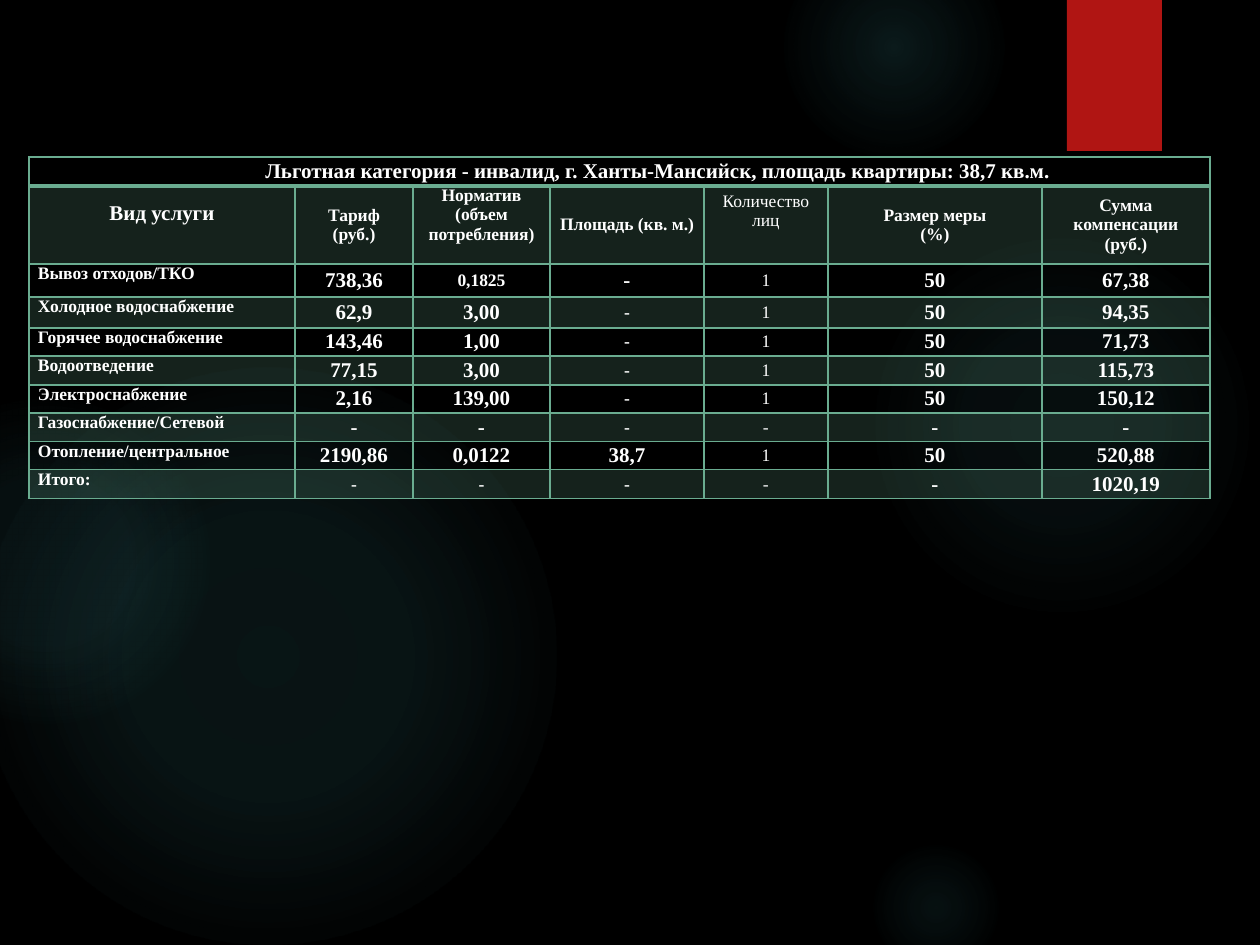
from lxml import etree
from pptx import Presentation
from pptx.dml.color import RGBColor
from pptx.enum.shapes import MSO_SHAPE
from pptx.enum.text import MSO_ANCHOR, PP_ALIGN
from pptx.oxml.ns import qn
from pptx.util import Emu, Pt

OVAL, RECT = MSO_SHAPE.OVAL, MSO_SHAPE.RECTANGLE
TOP, MIDDLE = MSO_ANCHOR.TOP, MSO_ANCHOR.MIDDLE
LEFT, CENTER = PP_ALIGN.LEFT, PP_ALIGN.CENTER
SCALE = 914400 / 126
FONT = "Times New Roman"
COLORS = {"back": "000000", "text": "FFFFFF", "line": "6AAC90",
          "glow": "50B9C1", "bar": "B01513"}

GLOWS = [
    ((868, 231, 388), [(0, 7), (36, 6), (69, 0)]),
    ((784, -63, 220), [(0, 14), (36, 7), (73, 0)]),
    ((868, 840, 136), [(0, 9), (36, 5), (66, 0)]),
    ((-21, 368, 577), [(0, 11), (36, 10), (75, 0)]),
    ((-116, 399, 325), [(0, 8), (36, 8), (72, 0)]),
]
COLUMNS = [266, 118, 137, 154, 124, 214, 168]
ROWS = [29, 77, 33, 31, 28, 29, 28, 29, 28, 29]
CAPTION = "Льготная категория - инвалид, г. Ханты-Мансийск, площадь квартиры: 38,7 кв.м."
HEADERS = ["Вид услуги", "Тариф\n(руб.)", "Норматив (объем потребления)",
           "Площадь (кв. м.)", "Количество лиц", "Размер меры\n(%)",
           "Сумма компенсации\n(руб.)"]
SERVICES = [
    ["Вывоз отходов/ТКО", "738,36", "0,1825", "-", "1", "50", "67,38"],
    ["Холодное водоснабжение", "62,9", "3,00", "-", "1", "50", "94,35"],
    ["Горячее водоснабжение", "143,46", "1,00", "-", "1", "50", "71,73"],
    ["Водоотведение", "77,15", "3,00", "-", "1", "50", "115,73"],
    ["Электроснабжение", "2,16", "139,00", "-", "1", "50", "150,12"],
    ["Газоснабжение/Сетевой", "-", "-", "-", "-", "-", "-"],
    ["Отопление/центральное", "2190,86", "0,0122", "38,7", "1", "50", "520,88"],
    ["Итого:", "-", "-", "-", "-", "-", "1020,19"],
]
PEOPLE = 4
SMALL = {(0, 2), (7, 1), (7, 2)} | {(r, 3) for r in (1, 2, 3, 4, 5, 7)}
HEADER_STYLES = {
    0: {"size": 12, "margins": (9, 0, 9, 23)},
    2: {"margins": (9, 0, 9, 20)},
    PEOPLE: {"bold": False, "anchor": TOP, "margins": (13, 6, 13, 6)},
}


def px(value):
    """Turn px into EMU."""
    return Emu(round(value * SCALE))


def rgb(name):
    """Return a named colour."""
    return RGBColor.from_string(COLORS[name])


def child(parent, tag, **attributes):
    """Add a DrawingML element with the given attributes."""
    node = etree.SubElement(parent, qn(f"a:{tag}"))
    for key, value in attributes.items():
        node.set(key, str(value))
    return node


def add_plain_shape(slide, kind, box, color):
    """Add a flat shape without an outline."""
    s = slide.shapes.add_shape(kind, *map(px, box))
    s.shadow.inherit = False
    s.fill.solid()
    s.fill.fore_color.rgb = rgb(color)
    s.line.fill.background()
    return s


def add_glow(slide, box, stops):
    """Add a round glow that fades towards its edge."""
    left, top, size = box
    s = add_plain_shape(slide, OVAL, (left, top, size, size), "glow")
    solid = s._element.spPr.find(qn("a:solidFill"))
    grad = etree.Element(qn("a:gradFill"), rotWithShape="1")
    stop_list = child(grad, "gsLst")
    for position, alpha in stops:
        stop = child(stop_list, "gs", pos=position * 1000)
        color = child(stop, "srgbClr", val=COLORS["glow"])
        child(color, "alpha", val=alpha * 1000)
    path = child(grad, "path", path="circle")
    child(path, "fillToRect", l=50000, t=50000, r=50000, b=50000)
    solid.getparent().replace(solid, grad)


def add_bar(slide, box):
    """Add the red bar with its soft shadow."""
    s = add_plain_shape(slide, RECT, box, "bar")
    effects = s._element.spPr.find(qn("a:effectLst"))
    shadow = child(effects, "outerShdw", blurRad=Pt(3), dist=Pt(2),
                   dir=5400000, rotWithShape=0)
    child(child(shadow, "srgbClr", val=COLORS["back"]), "alpha", val=45000)


def set_borders(cell, top, bottom):
    """Draw the four cell borders; top and bottom are widths in points."""
    properties = cell._tc.get_or_add_tcPr()
    widths = {"lnL": 1, "lnR": 1, "lnT": top, "lnB": bottom}
    for index, (tag, width) in enumerate(widths.items()):
        line = child(properties, tag, w=Pt(width))
        child(child(line, "solidFill"), "srgbClr", val=COLORS["line"])
        properties.insert(index, line)


def set_fill(cell, tinted):
    """Give a cell a translucent tint or no fill."""
    if not tinted:
        cell.fill.background()
        return
    cell.fill.solid()
    cell.fill.fore_color.rgb = rgb("line")
    color = cell._tc.tcPr.find(f".//{qn('a:srgbClr')}")
    child(color, "alpha", val=20000)


def write_cell(cell, text, size=10, bold=True, align=CENTER, anchor=MIDDLE,
               margins=(9, 0, 9, 0)):
    """Write and format the text of one cell."""
    cell.vertical_anchor = anchor
    for side, value in zip(("left", "top", "right", "bottom"), margins):
        setattr(cell, f"margin_{side}", px(value))
    cell.text_frame.text = text
    for p in cell.text_frame.paragraphs:
        p.alignment = align
        for r in p.runs:
            for name, value in {"name": FONT, "size": Pt(size), "bold": bold}.items():
                setattr(r.font, name, value)
            r.font.color.rgb = rgb("text")


def body_style(row, column):
    """Return the text style of a service cell."""
    if column == 0:
        return {"align": LEFT, "anchor": TOP}
    if column == PEOPLE:
        return {"bold": False}
    return {"size": 10 if (row, column) in SMALL else 12}


def add_compensation_table(slide, left, top):
    """Add the table of services and compensation amounts."""
    frame = slide.shapes.add_table(len(ROWS), len(COLUMNS), px(left), px(top),
                                   px(sum(COLUMNS)), px(sum(ROWS)))
    table = frame.table
    table.first_row = table.horz_banding = False
    for column, width in zip(table.columns, COLUMNS):
        column.width = px(width)
    for i, (row, height) in enumerate(zip(table.rows, ROWS)):
        row.height = px(height)
        for cell in row.cells:
            set_fill(cell, i % 2 == 1)
            set_borders(cell, 2 if i == 1 else 1, 2 if i == 0 else 1)
    caption = table.cell(0, 0)
    caption.merge(table.cell(0, len(COLUMNS) - 1))
    write_cell(caption, CAPTION, size=12, margins=(86, 0, 9, 0))
    for c, text in enumerate(HEADERS):
        write_cell(table.cell(1, c), text, **HEADER_STYLES.get(c, {}))
    for r, values in enumerate(SERVICES):
        for c, text in enumerate(values):
            write_cell(table.cell(r + 2, c), text, **body_style(r, c))


def main():
    """Build and save the slide."""
    prs = Presentation()
    prs.slide_width, prs.slide_height = px(1260), px(945)
    slide = prs.slides.add_slide(prs.slide_layouts[6])
    slide.background.fill.solid()
    slide.background.fill.fore_color.rgb = rgb("back")
    for box, stops in GLOWS:
        add_glow(slide, box, stops)
    add_bar(slide, (1067, 0, 95, 151))
    add_compensation_table(slide, 29, 157)
    prs.save("out.pptx")


if __name__ == "__main__":
    main()
